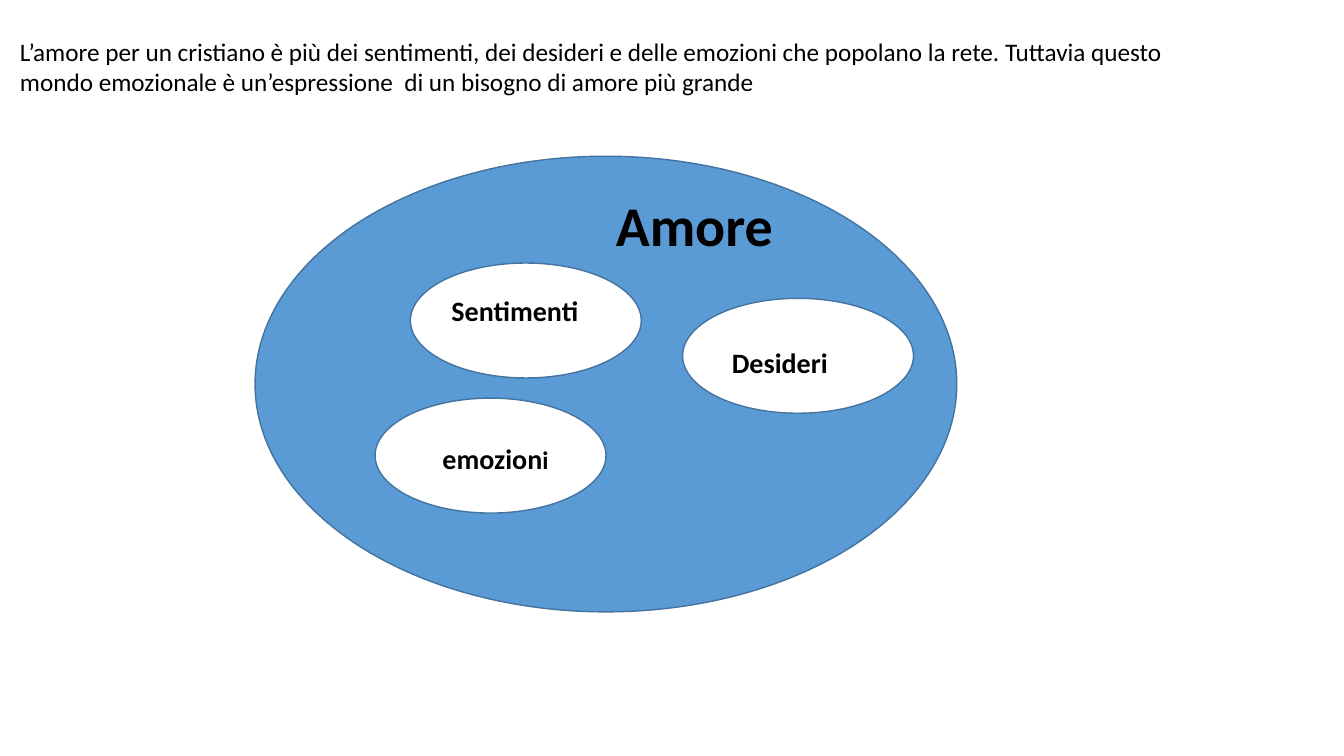
from pptx import Presentation
from pptx.dml.color import RGBColor
from pptx.enum.shapes import MSO_SHAPE
from pptx.enum.text import MSO_ANCHOR, MSO_AUTO_SIZE
from pptx.util import Inches, Pt

OVAL = MSO_SHAPE.OVAL
TOP, BOTTOM = MSO_ANCHOR.TOP, MSO_ANCHOR.BOTTOM
GROW = MSO_AUTO_SIZE.SHAPE_TO_FIT_TEXT

# Content
FONT = "Calibri"
COLORS = {"love": "5B9BD5", "feeling": "FFFFFF", "outline": "43739E", "text": "000000"}
INTRO = ("L’amore per un cristiano è più dei sentimenti, dei desideri e delle emozioni "
         "che popolano la rete. Tuttavia questo mondo emozionale è un’espressione  "
         "di un bisogno di amore più grande")
INTRO_BOX = (0.1, 0, 12.16, 1.01)
LOVE_OVAL = (2.53, 1.55, 6.96, 4.52)
LOVE_LABEL = ([("Amore", 40)], (6.01, 1.84, 2.38, 0.77))
FEELING_SIZE = (2.29, 1.14)
LABEL_HEIGHT = 0.44
# (oval left, top), label runs (text, points), (label left, top, width)
FEELINGS = [
    ((4.07, 2.61), [("Sentimenti", 20)], (4.38, 2.86, 1.64)),
    ((6.77, 2.96), [("Desideri", 20)], (7.16, 3.38, 1.39)),
    ((3.72, 3.95), [("emozion", 20), ("i", 18)], (4.29, 4.33, 1.42)),
]


def rgb(name):
    return RGBColor.from_string(COLORS[name])


def add_oval(s, box, fill):
    sp = s.shapes.add_shape(OVAL, *map(Inches, box))
    sp.shadow.inherit = False
    sp.fill.solid()
    sp.fill.fore_color.rgb = rgb(fill)
    sp.line.color.rgb = rgb("outline")
    sp.line.width = Pt(1)


def add_text(s, runs, box, bold=True, anchor=TOP):
    tf = s.shapes.add_textbox(*map(Inches, box)).text_frame
    for name, value in {"word_wrap": True, "auto_size": GROW,
                        "vertical_anchor": anchor}.items():
        setattr(tf, name, value)
    p = tf.paragraphs[0]
    for text, size in runs:
        r = p.add_run()
        r.text = text
        for name, value in {"name": FONT, "size": Pt(size), "bold": bold}.items():
            setattr(r.font, name, value)
        r.font.color.rgb = rgb("text")


prs = Presentation()
prs.slide_width, prs.slide_height = Inches(13.33), Inches(7.5)
s = prs.slides.add_slide(prs.slide_layouts[6])

# Love, the oval that holds the others
add_oval(s, LOVE_OVAL, "love")
add_text(s, *LOVE_LABEL)

# Feelings inside it
for corner, runs, label in FEELINGS:
    add_oval(s, corner + FEELING_SIZE, "feeling")
    add_text(s, runs, label + (LABEL_HEIGHT,))

# Introduction
add_text(s, [(INTRO, 18)], INTRO_BOX, bold=False, anchor=BOTTOM)

prs.save("out.pptx")
